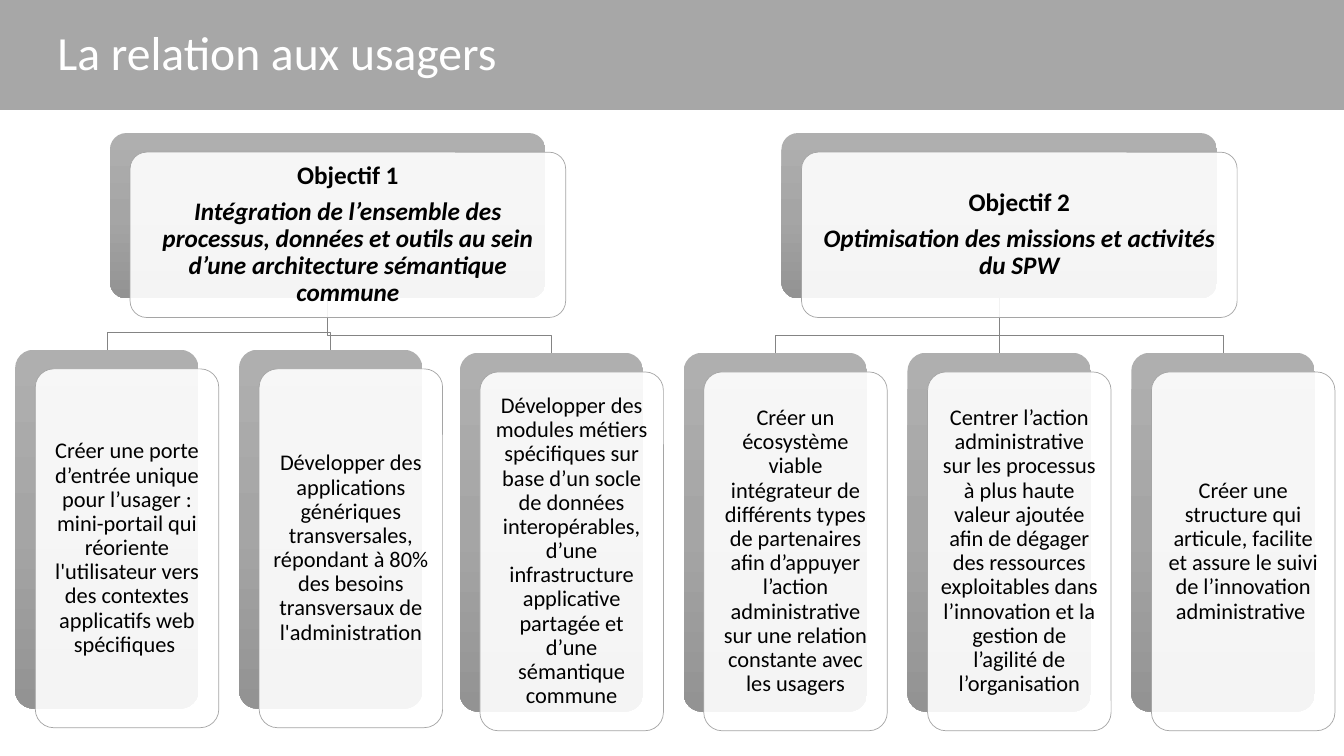
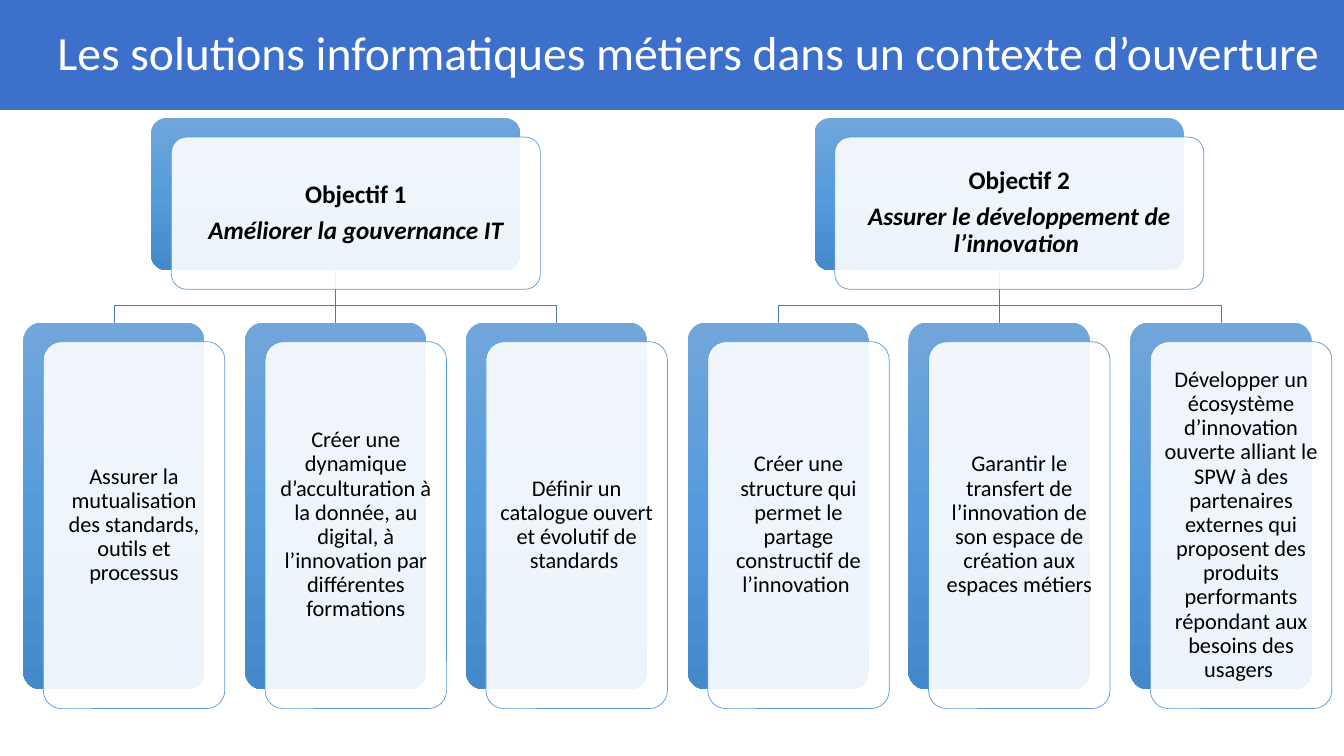
from collections import namedtuple
from copy import deepcopy

from lxml import etree
from pptx import Presentation
from pptx import util as u
from pptx.dml.color import RGBColor
from pptx.enum import shapes, text
from pptx.oxml.ns import qn

PX = 9144  # EMU per px, 100 px to the inch
SLIDE_W, SLIDE_H = 1333, 750
FONT = "Calibri"
WHITE, BLACK = "FFFFFF", "000000"
BAND_H = 109
FRONT_DX, FRONT_DY = 20, 19  # shift of the front card from the back card
BEND_RISE = 17               # height of a branch's bend above its action card
PER_GOAL = 3

Box = namedtuple("Box", "x y w h")
Theme = namedtuple("Theme", "band gradient edge branch")
# left, right: x of the first and last action card
Layout = namedtuple("Layout", "left right goal_y goal_w goal_h action_y action_w action_h")

GREY = Theme("A7A7A7", ("AFAFAF", "A5A5A5", "939393"), "A5A5A5", "848484")
BLUE = Theme("3D70CA", ("71A6DB", "559BDB", "448ACA"), "5B9BD5", "497CAB")


def px(length):
    return u.Emu(length * PX)


def rgb(hex_string):
    return RGBColor.from_string(hex_string)


def add_box(slide, kind, box):
    shape = slide.shapes.add_shape(kind, *map(px, box))
    shape.shadow.inherit = False
    return shape


def set_line(line, color):
    line.color.rgb = rgb(color)
    line.width = u.Pt(0.5)


def write(shape, paragraphs, size, color, align, margins):
    """Each paragraph is (words, bold, italic)."""
    frame = shape.text_frame
    frame.word_wrap = True
    frame.vertical_anchor = text.MSO_ANCHOR.MIDDLE
    (frame.margin_left, frame.margin_top,
     frame.margin_right, frame.margin_bottom) = map(px, margins)
    for i, (words, bold, italic) in enumerate(paragraphs):
        paragraph = frame.add_paragraph() if i else frame.paragraphs[0]
        paragraph.alignment = align
        paragraph.line_spacing = 0.9
        paragraph.space_after = u.Pt(0.35 * size)
        run = paragraph.add_run()
        run.text = words
        run.font.name, run.font.size = FONT, u.Pt(size)
        run.font.bold, run.font.italic = bold, italic
        run.font.color.rgb = rgb(color)


def add_title_band(slide, box, title, theme):
    band = add_box(slide, shapes.MSO_SHAPE.RECTANGLE, box)
    band.fill.solid()
    band.fill.fore_color.rgb = rgb(theme.band)
    band.line.fill.background()
    write(band, [(title, False, False)], 34, WHITE, text.PP_ALIGN.LEFT, (57, 9, 9, 9))


def add_card(slide, box, paragraphs, size, theme):
    """Gradient back card with a translucent text card in front; returns the back."""
    back, front = (
        add_box(slide, shapes.MSO_SHAPE.ROUNDED_RECTANGLE, place)
        for place in (box, box._replace(x=box.x + FRONT_DX, y=box.y + FRONT_DY)))
    for card in (back, front):
        card.adjustments[0] = 0.1

    # Back: three-stop gradient from top to bottom
    back.line.fill.background()
    back.fill.gradient()
    back.fill.gradient_angle = 270
    stops = back._element.spPr.find(qn("a:gradFill")).find(qn("a:gsLst"))
    stops.insert(1, deepcopy(stops[0]))
    for i, (stop, color) in enumerate(zip(back.fill.gradient_stops, theme.gradient)):
        stop.position = i / 2
        stop.color.rgb = rgb(color)

    # Front: white at 90 % opacity
    front.fill.solid()
    front.fill.fore_color.rgb = rgb(WHITE)
    white = front._element.spPr.find(qn("a:solidFill"))[0]
    etree.SubElement(white, qn("a:alpha")).set("val", "90000")
    set_line(front.line, theme.edge)
    write(front, paragraphs, size, BLACK, text.PP_ALIGN.CENTER, (7, 7, 7, 7))
    return back


def add_branch(slide, goal, action, theme):
    """Line from goal to action; returns the connector if it is straight."""
    start_x, start_y = goal.x + goal.w // 2, goal.y + goal.h
    end_x, end_y = action.x + action.w // 2, action.y
    if start_x == end_x:
        trunk = slide.shapes.add_connector(
            shapes.MSO_CONNECTOR.STRAIGHT, *map(px, (start_x, start_y, end_x, end_y)))
        set_line(trunk.line, theme.branch)
        etree.SubElement(trunk._element.spPr, qn("a:effectLst"))
        return trunk
    bend_y = end_y - BEND_RISE
    builder = slide.shapes.build_freeform(start_x, start_y, scale=PX)
    builder.add_line_segments(
        [(start_x, bend_y), (end_x, bend_y), (end_x, end_y)], close=False)
    elbow = builder.convert_to_shape()
    elbow.shadow.inherit = False
    elbow.fill.background()
    set_line(elbow.line, theme.branch)
    return None


def add_tree(slide, layout, goals, theme, nudges):
    """Goals, each above its actions; nudges moves single action cards by index."""
    last = PER_GOAL * len(goals) - 1
    actions = []
    for i in range(last + 1):
        dx, dy = nudges.get(i, (0, 0))
        x = layout.left + round((layout.right - layout.left) * i / last)
        actions.append(Box(x + dx, layout.action_y + dy, layout.action_w, layout.action_h))

    # Each goal is centred over the regular place of its middle action
    branches = []
    for g, (name, aim, tasks) in enumerate(goals):
        middle = PER_GOAL * g + 1
        center = actions[middle].x - nudges.get(middle, (0, 0))[0] + layout.action_w // 2
        goal = Box(center - layout.goal_w // 2, layout.goal_y, layout.goal_w, layout.goal_h)
        places = actions[PER_GOAL * g:PER_GOAL * (g + 1)]
        trunks = [add_branch(slide, goal, place, theme) for place in places]
        branches.append((goal, places, trunks))

    # Cards lie over the branches
    for (name, aim, tasks), (goal, places, trunks) in zip(goals, branches):
        goal_card = add_card(
            slide, goal, [(name, True, False), (aim, True, True)], 18, theme)
        for task, place, trunk in zip(tasks, places, trunks):
            action_card = add_card(slide, place, [(task, False, False)], 16, theme)
            if trunk is not None:
                trunk.begin_connect(goal_card, 2)
                trunk.end_connect(action_card, 0)


def add_goal_slide(deck, title, theme, layout, goals, nudges):
    slide = deck.slides.add_slide(deck.slide_layouts[6])
    add_title_band(slide, Box(0, 0, SLIDE_W, BAND_H), title, theme)
    add_tree(slide, layout, goals, theme, nudges)


USER_GOALS = [
    ("Objectif 1",
     "Intégration de l’ensemble des processus, données et outils au sein "
     "d’une architecture sémantique commune",
     ["Créer une porte d’entrée unique pour l’usager : mini-portail qui réoriente "
      "l'utilisateur vers des contextes applicatifs web spécifiques ",
      "Développer des applications génériques transversales, répondant à 80% des "
      "besoins transversaux de l'administration",
      "Développer des modules métiers spécifiques sur base d’un socle de données "
      "interopérables, d’une infrastructure applicative partagée et d’une "
      "sémantique commune"]),
    ("Objectif 2",
     "Optimisation des missions et activités du SPW",
     ["Créer un écosystème viable intégrateur de différents types de partenaires "
      "afin d’appuyer l’action administrative sur une relation constante avec "
      "les usagers",
      "Centrer l’action administrative sur les processus à plus haute valeur "
      "ajoutée afin de dégager des ressources exploitables dans l’innovation et la "
      "gestion de l’agilité de l’organisation",
      "Créer une structure qui articule, facilite et assure le suivi de "
      "l’innovation administrative "]),
]

SOLUTION_GOALS = [
    ("Objectif 1",
     "Améliorer la gouvernance IT",
     ["Assurer la mutualisation des standards, outils et processus",
      "Créer une dynamique d’acculturation à la donnée, au digital, à l’innovation "
      "par différentes formations",
      "Définir un catalogue ouvert et évolutif de standards "]),
    ("Objectif 2",
     "Assurer le développement de l’innovation ",
     ["Créer une structure qui permet le partage constructif de l’innovation ",
      "Garantir le transfert de l’innovation de son espace de création aux espaces "
      "métiers",
      "Développer un écosystème d’innovation ouverte alliant le SPW à des "
      "partenaires externes qui proposent des produits performants répondant aux "
      "besoins des usagers "]),
]


def main():
    deck = Presentation()
    deck.slide_width, deck.slide_height = px(SLIDE_W), px(SLIDE_H)
    add_goal_slide(deck, "La relation aux usagers", GREY,
                   Layout(12, 1122, 132, 432, 164, 350, 182, 356),
                   USER_GOALS, {0: (3, -3), 1: (3, -3)})
    add_goal_slide(deck, "Les solutions informatiques métiers dans un contexte d’ouverture",
                   BLUE, Layout(23, 1121, 117, 366, 151, 320, 180, 364),
                   SOLUTION_GOALS, {})
    deck.save("out.pptx")


if __name__ == "__main__":
    main()
